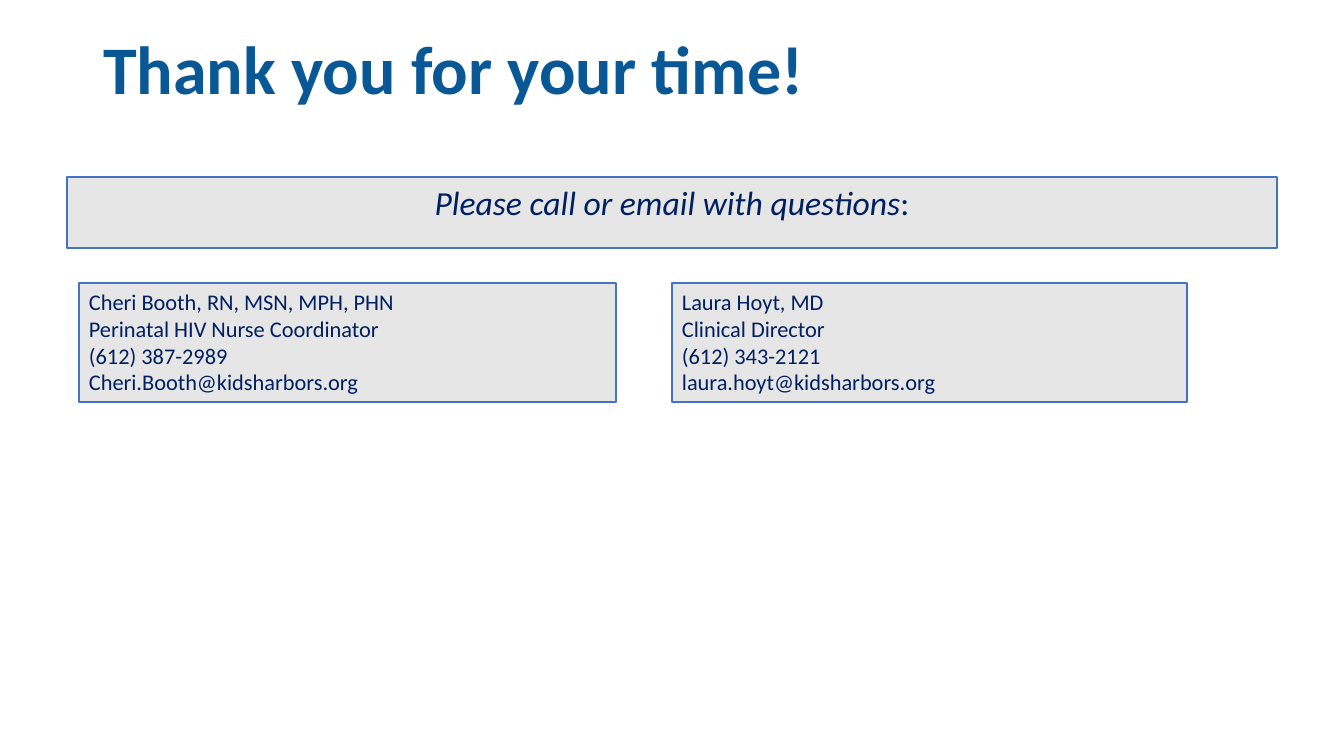
from pptx import Presentation
from pptx.dml.color import RGBColor
from pptx.enum.shapes import MSO_SHAPE
from pptx.enum.text import MSO_ANCHOR, MSO_AUTO_SIZE, PP_ALIGN
from pptx.util import Emu, Pt

PX = 914400 / 100.8
FONT = "Calibri"
BLUE, NAVY, GRAY, OUTLINE = "095895", "002060", "E7E6E6", "4472C4"
CONTACTS = [
    ((79, 283, 537, 119), ["Cheri Booth, RN, MSN, MPH, PHN",
                           "Perinatal HIV Nurse Coordinator\v(612) 387-2989",
                           "Cheri.Booth@kidsharbors.org"]),
    ((672, 283, 515, 119), ["Laura Hoyt, MD",
                            "Clinical Director\v(612) 343-2121",
                            "laura.hoyt@kidsharbors.org"]),
]


def px(length):
    return Emu(round(length * PX))


def color(value):
    return RGBColor.from_string(value)


def format_runs(paragraph, size, value, bold=False, italic=False):
    for run in paragraph.runs:
        run.font.name = FONT
        run.font.size = Pt(size)
        run.font.color.rgb = color(value)
        run.font.bold = bold
        run.font.italic = italic


def set_title(slide, box, text):
    title = slide.shapes.title
    title.left, title.top, title.width, title.height = map(px, box)
    frame = title.text_frame
    frame.text = text
    frame.auto_size = MSO_AUTO_SIZE.NONE
    frame.vertical_anchor = MSO_ANCHOR.MIDDLE
    paragraph = frame.paragraphs[0]
    paragraph.alignment = PP_ALIGN.LEFT
    paragraph.line_spacing = 0.9
    format_runs(paragraph, 48.6, BLUE, bold=True)


def add_panel(slide, box, lines, size, alignment=PP_ALIGN.LEFT, italic=False):
    """Add an outlined gray panel and return its text frame."""
    panel = slide.shapes.add_shape(MSO_SHAPE.RECTANGLE, *map(px, box))
    panel.shadow.inherit = False
    panel.fill.solid()
    panel.fill.fore_color.rgb = color(GRAY)
    panel.line.color.rgb = color(OUTLINE)
    panel.line.width = Pt(1)
    frame = panel.text_frame
    frame.word_wrap = True
    frame.vertical_anchor = MSO_ANCHOR.TOP
    frame.text = "\n".join(lines)
    for paragraph in frame.paragraphs:
        paragraph.alignment = alignment
        format_runs(paragraph, size, NAVY, italic=italic)
    return frame


def add_invitation(slide, box):
    frame = add_panel(slide, box, ["Please call or email with questions"], 24,
                      PP_ALIGN.CENTER, italic=True)
    paragraph = frame.paragraphs[0]
    colon = paragraph.add_run()
    colon.text = ":"
    format_runs(paragraph, 24, NAVY, italic=True)
    colon.font.italic = False


def add_contact(slide, box, lines):
    frame = add_panel(slide, box, lines, 16)
    frame.auto_size = MSO_AUTO_SIZE.SHAPE_TO_FIT_TEXT


def main():
    presentation = Presentation()
    presentation.slide_width, presentation.slide_height = px(1344), px(756)
    slide = presentation.slides.add_slide(presentation.slide_layouts[5])
    set_title(slide, (93, 26, 1159, 92), "Thank you for your time!")
    add_invitation(slide, (67, 177, 1210, 71))
    for box, lines in CONTACTS:
        add_contact(slide, box, lines)
    presentation.save("out.pptx")


if __name__ == "__main__":
    main()
